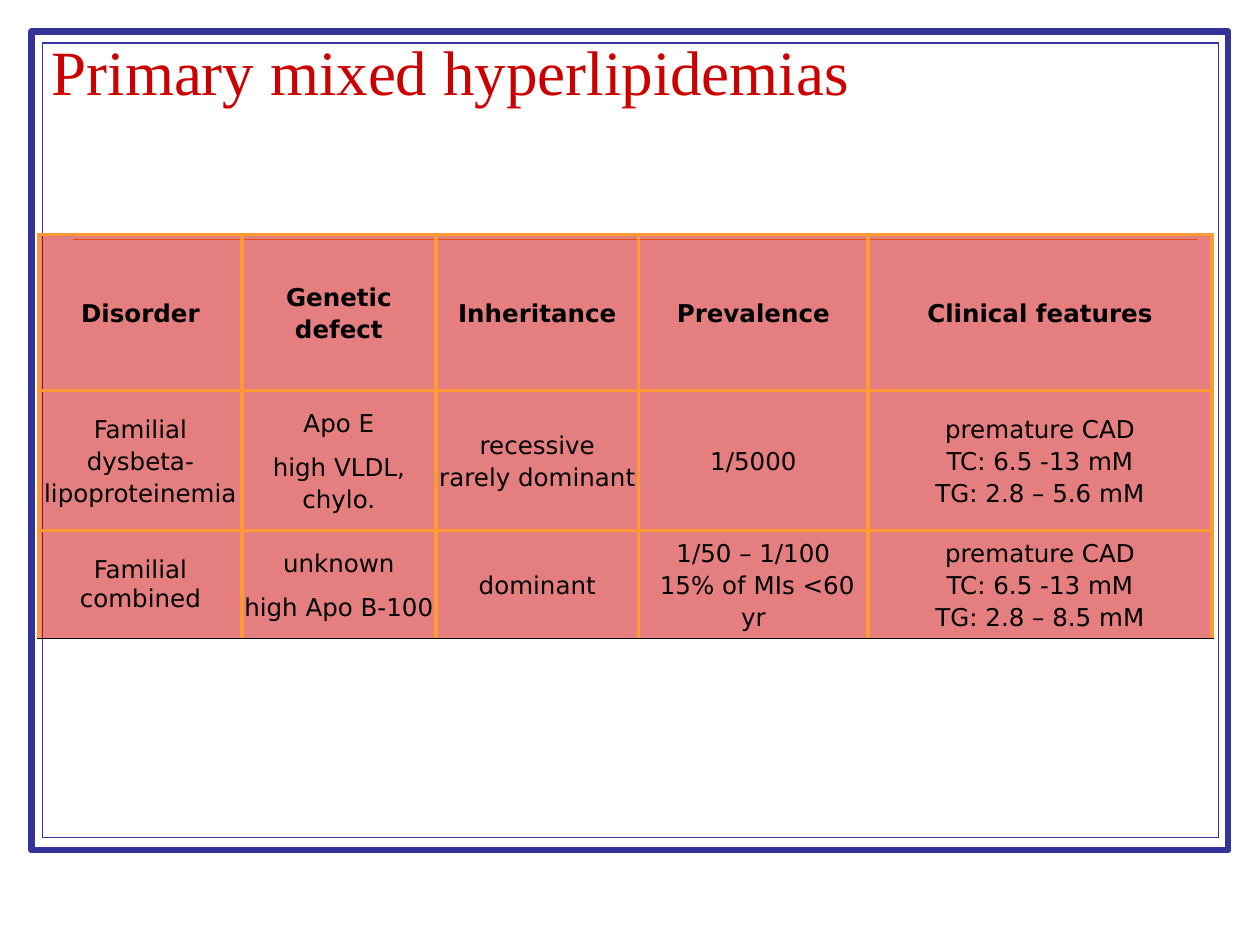
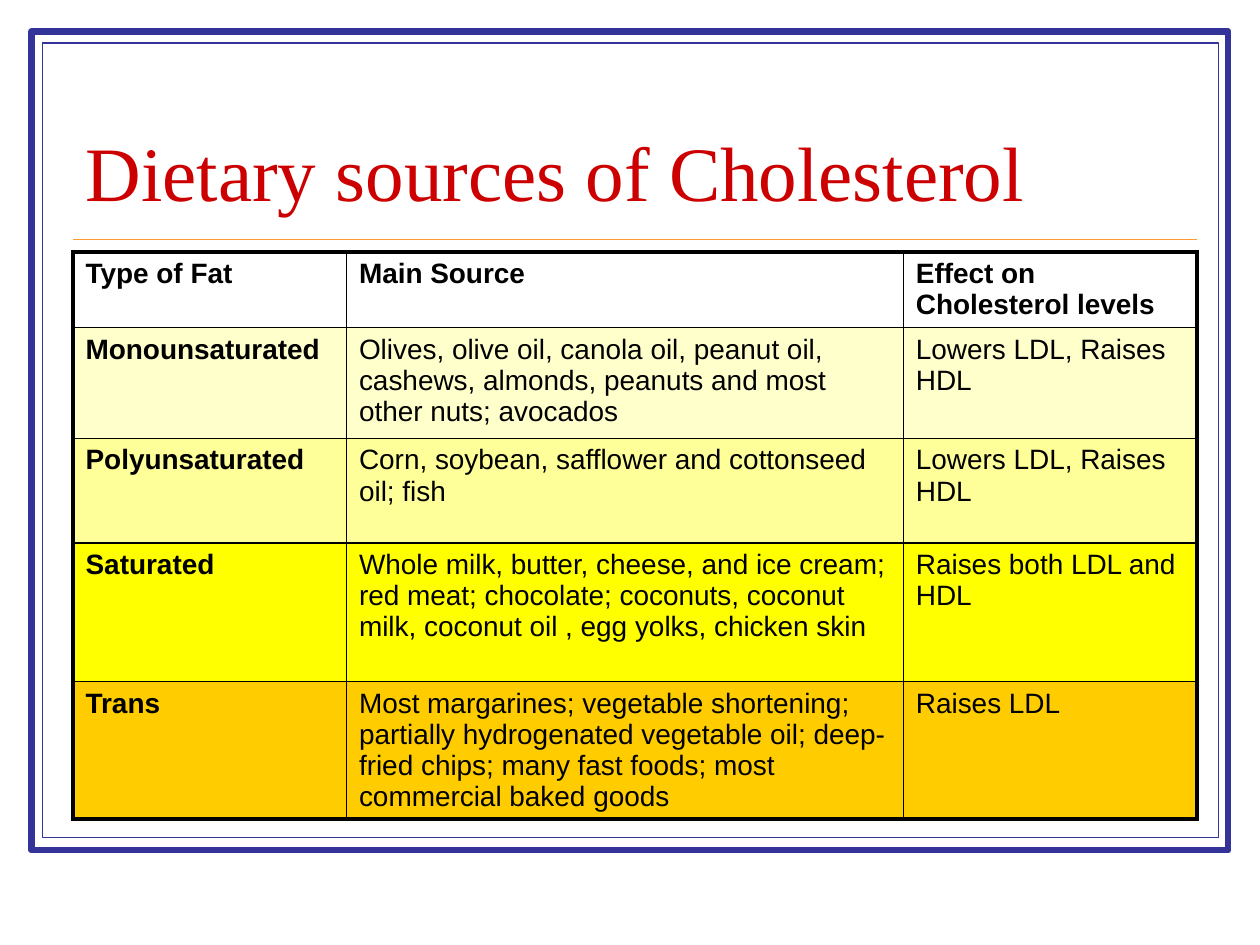
from copy import deepcopy
from dataclasses import dataclass

from lxml import etree
from pptx import Presentation
from pptx.dml.color import RGBColor
from pptx.enum import shapes, text
from pptx.oxml import ns
from pptx.util import Inches, Pt


@dataclass(frozen=True)
class Theme:
    """Colours, fonts and type sizes of the deck."""
    paper: str = "FFFFFF"
    ink: str = "000000"
    frame: str = "333399"
    accent: str = "FF9933"
    title: str = "CC0000"
    fats: tuple = (None, "FFFFCC", "FFFF99", "FFFF00", "FFCC00")
    title_font: str = "Times New Roman"
    disorder_font: str = "DejaVu Sans"
    fat_font: str = "Arial"
    disorder_size: int = 14
    fat_size: int = 16


@dataclass(frozen=True)
class CellStyle:
    """Text settings shared by the cells of one table."""
    font: str
    size: int
    align: object = text.PP_ALIGN.LEFT
    anchor: object = text.MSO_ANCHOR.TOP
    side_margin: float = 0.1
    line_spacing: float = 1.0
    space_before: float = 0


THEME = Theme()
THICK, THIN = 2.25, 1

DISORDERS = [
    ["Disorder", "Genetic defect", "Inheritance", "Prevalence", "Clinical features"],
    ["Familial dysbeta-lipoproteinemia", "Apo E\nhigh VLDL, chylo.",
     "recessive\vrarely dominant", "1/5000",
     "premature CAD\vTC: 6.5 -13 mM\vTG: 2.8 – 5.6 mM"],
    ["Familial combined", "unknown\nhigh Apo B-100", "dominant",
     "1/50 – 1/100\v 15% of MIs <60 yr",
     "premature CAD\vTC: 6.5 -13 mM\vTG: 2.8 – 8.5 mM"],
]
FATS = [
    ["Type of Fat", "Main Source", "Effect on Cholesterol levels"],
    ["Monounsaturated",
     "Olives, olive oil, canola oil, peanut oil, cashews, almonds, peanuts "
     "and most other nuts; avocados", "Lowers LDL, Raises HDL"],
    ["Polyunsaturated", "Corn, soybean, safflower and cottonseed oil; fish",
     "Lowers LDL, Raises HDL"],
    ["Saturated",
     "Whole milk, butter, cheese, and ice cream; red meat; chocolate; coconuts, "
     "coconut milk, coconut oil , egg yolks, chicken skin", "Raises both LDL and HDL"],
    ["Trans",
     "Most margarines; vegetable shortening; partially hydrogenated vegetable oil; "
     "deep-fried chips; many fast foods; most commercial baked goods", "Raises LDL"],
]


def rgb(value):
    """Turn a hex string into a colour."""
    return RGBColor.from_string(value)


def style_font(font, name, size, color, bold=False):
    """Set the face, size, colour and weight of a font."""
    font.name, font.size, font.bold = name, Pt(size), bold
    font.color.rgb = rgb(color)


def add_frame(s, inset, width, height, weight):
    """Draw one rectangle of the page border."""
    sp = s.shapes.add_shape(shapes.MSO_SHAPE.RECTANGLE, Inches(inset), Inches(inset),
                            Inches(width), Inches(height))
    sp.shadow.inherit = False
    sp.fill.solid()
    sp.fill.fore_color.rgb = rgb(THEME.paper)
    sp.line.color.rgb = rgb(THEME.frame)
    sp.line.width = Pt(weight)
    return sp


def add_rule(s):
    """Draw the line under the title area."""
    rule = s.shapes.add_connector(shapes.MSO_CONNECTOR.STRAIGHT, Inches(0.58), Inches(1.9),
                                  Inches(9.5), Inches(1.9))
    rule.line.color.rgb = rgb(THEME.accent)
    rule.line.width = Pt(THIN)
    etree.SubElement(rule.element.spPr, ns.qn("a:effectLst"))
    return rule


def add_layout_border(s):
    """Place the border and rule on the layout behind every slide."""
    parts = [add_frame(s, 0.25, 9.5, 6.5, 3.5), add_frame(s, 0.34, 9.33, 6.31, 0.75),
             add_rule(s)]
    tree = s.slide_layout.shapes.element
    for index, part in enumerate(parts, start=2):
        tree.insert(index, part.element)


def set_title(s, wording, box, size, anchor, line_spacing):
    """Move and format the title placeholder."""
    sp = s.shapes.title
    sp.left, sp.top, sp.width, sp.height = map(Inches, box)
    tf = sp.text_frame
    tf.text = wording
    tf.word_wrap = True
    tf.auto_size = text.MSO_AUTO_SIZE.NONE
    tf.vertical_anchor = anchor
    p = tf.paragraphs[0]
    p.alignment = text.PP_ALIGN.LEFT
    p.line_spacing = line_spacing
    style_font(p.runs[0].font, THEME.title_font, size, THEME.title)


def solid_fill(parent, color):
    """Append a solid fill to an XML element."""
    fill = etree.SubElement(parent, ns.qn("a:solidFill"))
    return etree.SubElement(fill, ns.qn("a:srgbClr"), val=color)


def set_borders(cell, borders):
    """Set the cell borders, given as colour and weight by side."""
    tc_pr = cell._tc.get_or_add_tcPr()
    for index, side in enumerate("LRTB"):
        color, weight = borders[side]
        ln = etree.Element(ns.qn(f"a:ln{side}"), w=str(Pt(weight)))
        solid_fill(ln, color)
        tc_pr.insert(index, ln)


def set_fill(cell, color, opacity):
    """Fill a cell, or leave it clear when no colour is given."""
    if color is None:
        cell.fill.background()
        return
    cell.fill.solid()
    cell.fill.fore_color.rgb = rgb(color)
    if opacity < 100:
        clr = next(cell._tc.tcPr.iter(ns.qn("a:srgbClr")))
        etree.SubElement(clr, ns.qn("a:alpha"), val=str(opacity * 1000))


def set_cell_text(cell, wording, style, bold):
    """Write and format the paragraphs of a cell."""
    cell.text = wording
    cell.vertical_anchor = style.anchor
    cell.margin_left = cell.margin_right = Inches(style.side_margin)
    for index, p in enumerate(cell.text_frame.paragraphs):
        p.alignment = style.align
        p.line_spacing = style.line_spacing
        if index:
            p.space_before = Pt(style.space_before)
        for r in p.runs:
            style_font(r.font, style.font, style.size, THEME.ink, bold)
        for br in p._p.findall(ns.qn("a:br")):
            br.insert(0, deepcopy(p.runs[0]._r.rPr))


def add_grid(s, rows, origin, widths, heights, style, fills, inner, outer,
             opacity=100, bold_column=False):
    """Add a table with row fills and separate inner and outer borders."""
    frame = s.shapes.add_table(len(rows), len(widths), *map(Inches, origin),
                               Inches(sum(widths)), Inches(sum(heights)))
    table = frame.table
    table.first_row = table.horz_banding = False
    for column, width in zip(table.columns, widths):
        column.width = Inches(width)
    for row, height in zip(table.rows, heights):
        row.height = Inches(height)
    for i, row in enumerate(rows):
        for j, wording in enumerate(row):
            cell = table.cell(i, j)
            set_cell_text(cell, wording, style, i == 0 or (bold_column and j == 0))
            set_fill(cell, fills[i], opacity)
            on_edge = {"L": j == 0, "R": j == len(row) - 1,
                       "T": i == 0, "B": i == len(rows) - 1}
            set_borders(cell, {side: outer[side] if edge else inner
                               for side, edge in on_edge.items()})
    return table


def build_disorders(s):
    """Fill the slide on mixed hyperlipidemias."""
    set_title(s, "Primary mixed hyperlipidemias", (0.31, 0.28, 9.31, 0.63), 36,
              text.MSO_ANCHOR.MIDDLE, 0.9)
    style = CellStyle(THEME.disorder_font, THEME.disorder_size, text.PP_ALIGN.CENTER,
                      text.MSO_ANCHOR.MIDDLE, 0, 1.1, THEME.disorder_size / 2)
    orange = (THEME.accent, THICK)
    outer = dict.fromkeys("LRT", orange) | {"B": (THEME.ink, THIN)}
    table = add_grid(s, DISORDERS, (0.31, 1.86), (1.61, 1.54, 1.61, 1.82, 2.73),
                     (1.24, 1.11, 0.86), style, [THEME.title] * len(DISORDERS),
                     orange, outer, opacity=50)
    table.cell(2, 0).text_frame.paragraphs[0].line_spacing = 1.0


def build_fats(s):
    """Fill the slide on dietary fats."""
    set_title(s, "Dietary sources of Cholesterol", (0.58, 0.52, 8.92, 1.25), 44,
              text.MSO_ANCHOR.BOTTOM, 0.8)
    add_grid(s, FATS, (0.58, 2), (2.17, 4.42, 2.33), (0.6, 0.88, 0.83, 1.1, 1.09),
             CellStyle(THEME.fat_font, THEME.fat_size), THEME.fats, (THEME.ink, THIN),
             dict.fromkeys("LRTB", (THEME.ink, THICK)), bold_column=True)


def main():
    """Build and save the deck."""
    prs = Presentation()
    prs.slide_width, prs.slide_height = Inches(10), Inches(7.5)
    layout = prs.slide_layouts[5]
    disorders, fats = (prs.slides.add_slide(layout) for _ in range(2))
    add_layout_border(disorders)
    build_disorders(disorders)
    build_fats(fats)
    prs.save("out.pptx")


if __name__ == "__main__":
    main()
